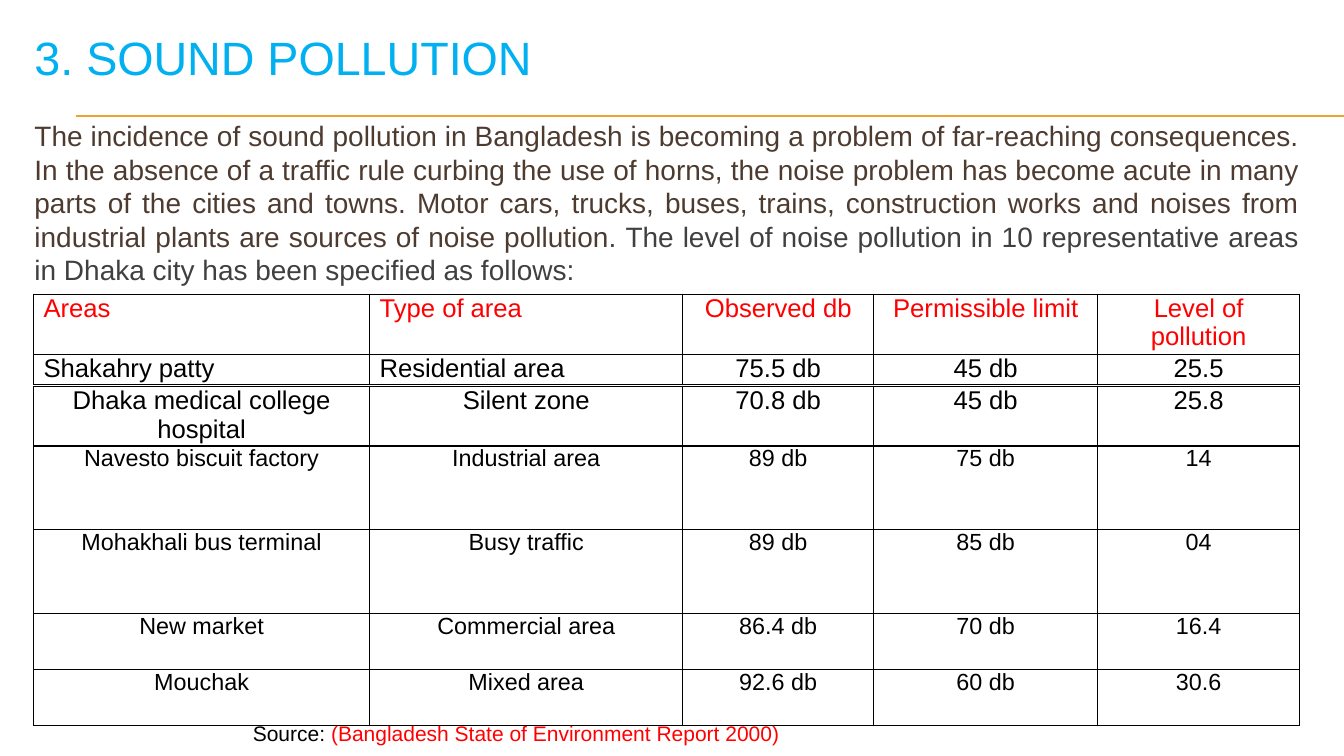
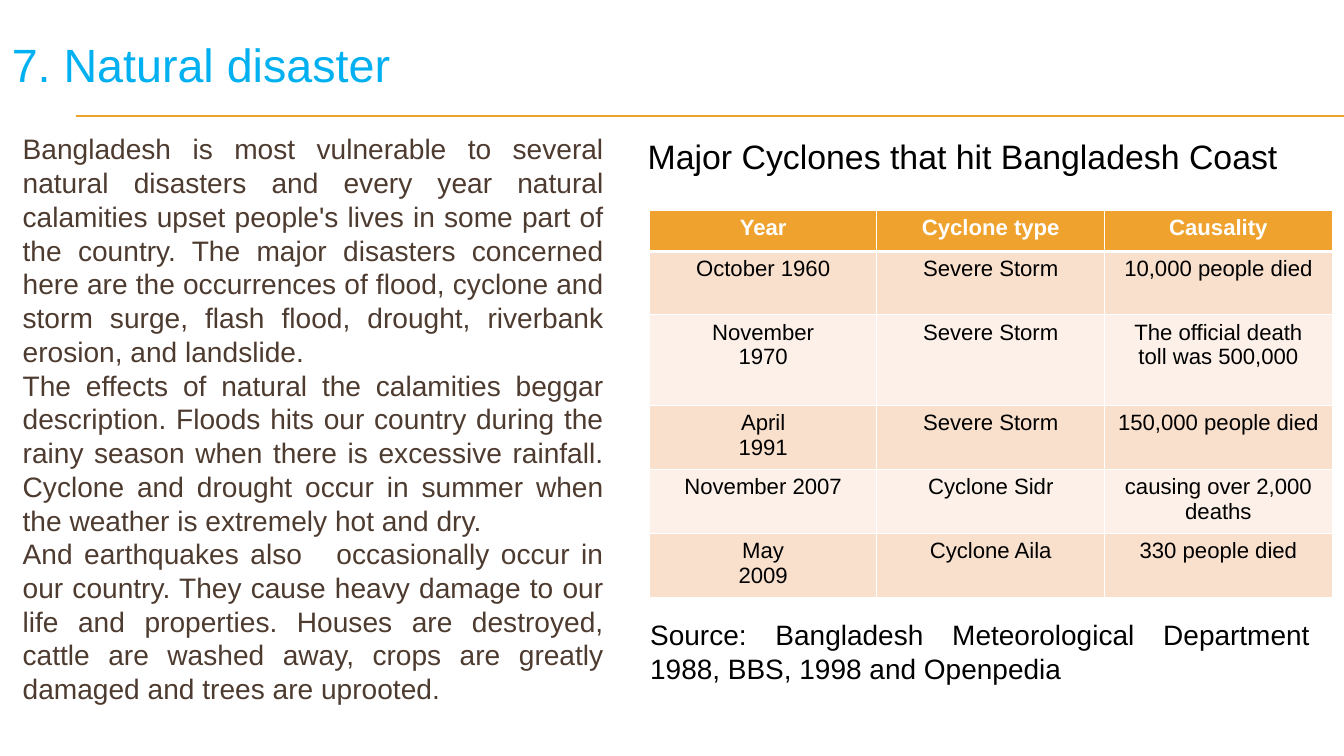
from lxml import etree
from pptx import Presentation
from pptx import util as u
from pptx.dml.color import RGBColor
from pptx.enum import shapes, text
from pptx.oxml import ns

FONT = "Arial"
SKY, GOLD, BROWN, GREY = "00B0F0", "F0A22E", "4E3B30", "404040"
RED, BLACK, WHITE = "FF0000", "000000", "FFFFFF"
PEACH, CREAM = "F9E0CD", "FCF0E8"
LEFT, MID, JUST = text.PP_ALIGN.LEFT, text.PP_ALIGN.CENTER, text.PP_ALIGN.JUSTIFY
TOP, CENTRE = text.MSO_ANCHOR.TOP, text.MSO_ANCHOR.MIDDLE


def tint(code):
    return RGBColor.from_string(code)


def assign(item, **values):
    for name, value in values.items():
        setattr(item, name, value)


def inset(item, x, y):
    assign(item, margin_left=u.Inches(x), margin_right=u.Inches(x),
           margin_top=u.Inches(y), margin_bottom=u.Inches(y))


def write(para, parts, size, align, bold=False):
    """Fill a paragraph with (words, colour) parts."""
    para.alignment = align
    for words, code in parts:
        run = para.add_run()
        run.text = words
        assign(run.font, name=FONT, size=u.Pt(size), bold=bold)
        run.font.color.rgb = tint(code)


def edge(cell, code, top=1, base=1):
    """Draw the four cell borders; widths are in points."""
    props = cell._tc.get_or_add_tcPr()
    widths = {"lnL": 1, "lnR": 1, "lnT": top, "lnB": base}
    for i, (tag, width) in enumerate(widths.items()):
        line = etree.Element(ns.qn("a:" + tag), w=str(u.Pt(width)))
        fill = etree.SubElement(line, ns.qn("a:solidFill"))
        etree.SubElement(fill, ns.qn("a:srgbClr"), val=code)
        props.insert(i, line)


class Deck:
    def __init__(self):
        self.prs = Presentation()
        assign(self.prs, slide_width=u.Inches(16), slide_height=u.Inches(9))
        self.slide = None

    def page(self, title, *box):
        self.slide = self.prs.slides.add_slide(self.prs.slide_layouts[5])
        for y in (1.38, 1.39):
            self.rule(0.9, y, 16)
        head = self.slide.shapes.title
        self.place(head, *box)
        self.fill(head.text_frame, [[(title, SKY)]], 40, LEFT, CENTRE)

    def place(self, shape, x, y, w, h):
        assign(shape, left=u.Inches(x), top=u.Inches(y),
               width=u.Inches(w), height=u.Inches(h))

    def rule(self, x, y, end):
        line = self.slide.shapes.add_connector(
            shapes.MSO_CONNECTOR.STRAIGHT, *map(u.Inches, (x, y, end, y)))
        line.line.color.rgb = tint(GOLD)
        line.line.width = u.Pt(0.75)
        etree.SubElement(line._element.spPr, ns.qn("a:effectLst"))

    def fill(self, frame, paras, size, align, anchor, space=None):
        assign(frame, word_wrap=True, vertical_anchor=anchor,
               auto_size=text.MSO_AUTO_SIZE.NONE)
        inset(frame, 0.14, 0.07)
        for i, parts in enumerate(paras):
            para = frame.add_paragraph() if i else frame.paragraphs[0]
            para.line_spacing = space
            write(para, parts, size, align)

    def text(self, box, paras, size, align=JUST, anchor=CENTRE, space=None):
        shape = self.slide.shapes.add_textbox(*map(u.Inches, box))
        self.fill(shape.text_frame, paras, size, align, anchor, space)

    def table(self, x, y, cols, tall, rows, style):
        """Add a table; style(row, col) gives the format of a cell."""
        frame = self.slide.shapes.add_table(
            len(rows), len(cols),
            *map(u.Inches, (x, y, sum(cols), sum(tall))))
        grid = frame.table
        assign(grid, first_row=False, horz_banding=False)
        for col, width in zip(grid.columns, cols):
            col.width = u.Inches(width)
        for r, (row, height) in enumerate(zip(rows, tall)):
            grid.rows[r].height = u.Inches(height)
            for c, words in enumerate(row):
                self.cell(grid.cell(r, c), words, **style(r, c))

    def cell(self, cell, words, size, code, pad, line, align=MID,
             bold=False, back=None, top=1, base=1):
        inset(cell, *pad)
        if back:
            cell.fill.solid()
            cell.fill.fore_color.rgb = tint(back)
        else:
            cell.fill.background()
        edge(cell, line, top, base)
        for i, part in enumerate(words.split("\n")):
            frame = cell.text_frame
            para = frame.add_paragraph() if i else frame.paragraphs[0]
            write(para, [(part, code)], size, align, bold)


def noise(deck):
    deck.page("3. SOUND POLLUTION", 0.27, 0, 12.27, 1.35)
    deck.text((0.27, 1.34, 15.33, 2.16), [[
        ("The incidence of sound pollution in Bangladesh is becoming a problem "
         "of far-reaching consequences. In the absence of a traffic rule curbing "
         "the use of horns, the noise problem has become acute in many parts of "
         "the cities and towns. Motor cars, trucks, buses, trains, construction "
         "works and noises from industrial plants are sources of noise "
         "pollution. ", BROWN),
        ("The level of noise pollution in 10 representative areas in Dhaka city "
         "has been specified as follows:", GREY)]], 24, anchor=TOP)

    cols = [4, 3.73, 2.27, 2.67, 2.4]

    def upper(r, c):
        return dict(size=22, code=BLACK if r else RED, pad=(0.12, 0),
                    line=BLACK, align=LEFT if c < 2 else MID)

    def middle(r, c):
        return dict(size=22, code=BLACK, pad=(0.12, 0), line=BLACK)

    def lower(r, c):
        return dict(size=20, code=BLACK, pad=(0.11, 0), line=BLACK)

    deck.table(0.4, 3.5, cols, [0.72, 0.36], [
        ["Areas", "Type of area", "Observed db", "Permissible limit",
         "Level of pollution"],
        ["Shakahry patty", "Residential area", "75.5 db", "45 db", "25.5"],
    ], upper)
    deck.table(0.4, 4.6, cols, [0.72], [
        ["Dhaka medical college hospital", "Silent zone", "70.8 db", "45 db",
         "25.8"],
    ], middle)
    deck.table(0.4, 5.3, cols, [1, 1, 0.67, 0.67], [
        ["Navesto biscuit factory", "Industrial area", "89 db", "75 db", "14"],
        ["Mohakhali bus terminal", "Busy traffic", "89 db", "85 db", "04"],
        ["New market", "Commercial area", "86.4 db", "70 db", "16.4"],
        ["Mouchak", "Mixed area", "92.6 db", "60 db", "30.6"],
    ], lower)
    deck.text((2.87, 8.48, 7.4, 0.5), [[
        ("Source: ", BLACK),
        ("(Bangladesh State of Environment Report 2000)", RED)]], 18)


def storms(deck):
    deck.page("7. Natural disaster", 0, 0.3, 13.6, 0.91)
    story = [
        "Bangladesh is most vulnerable to several natural disasters and every "
        "year natural calamities upset people's lives in some part of the "
        "country. The major disasters concerned here are the occurrences of "
        "flood, cyclone and storm surge, flash flood, drought, riverbank "
        "erosion, and landslide.",
        "The effects of natural the calamities beggar description. Floods hits "
        "our country during the rainy season when there is excessive rainfall. "
        "Cyclone and drought occur in summer when the weather is extremely hot "
        "and dry.",
        "And earthquakes also   occasionally occur in our country. They cause "
        "heavy damage to our life and properties. Houses are destroyed, cattle "
        "are washed away, crops are greatly damaged and trees are uprooted."]
    deck.text((0.13, 1.5, 7.2, 7.34), [[(part, BROWN)] for part in story],
              24.1, anchor=TOP)

    def band(r, c):
        look = dict(size=19, pad=(0.16, 0.06), line=WHITE, code=BLACK,
                    back=PEACH if r % 2 else CREAM, top=3 if r == 1 else 1)
        if r == 0:
            look.update(code=WHITE, back=GOLD, bold=True, base=3)
        return look

    deck.table(7.73, 2.5, [2.71] * 3, [0.49, 0.76, 1.08] + [0.76] * 3, [
        ["Year", "Cyclone type", "Causality"],
        ["October 1960", "Severe Storm", "10,000 people died"],
        ["November\n1970", "Severe Storm", "The official death toll was 500,000"],
        ["April\n1991", "Severe Storm", "150,000 people died"],
        ["November 2007", "Cyclone Sidr", "causing over 2,000 deaths"],
        ["May\n2009", "Cyclone Aila", "330 people died"],
    ], band)
    deck.text((7.33, 1.4, 8.27, 0.91),
              [[("Major Cyclones that hit Bangladesh Coast", BLACK)]], 29, MID)
    deck.text((7.6, 7.3, 8.13, 0.91),
              [[("Source: Bangladesh Meteorological Department 1988, BBS, 1998 "
                 "and Openpedia", BLACK)]], 24)


def main():
    deck = Deck()
    noise(deck)
    storms(deck)
    deck.prs.save("out.pptx")


if __name__ == "__main__":
    main()
